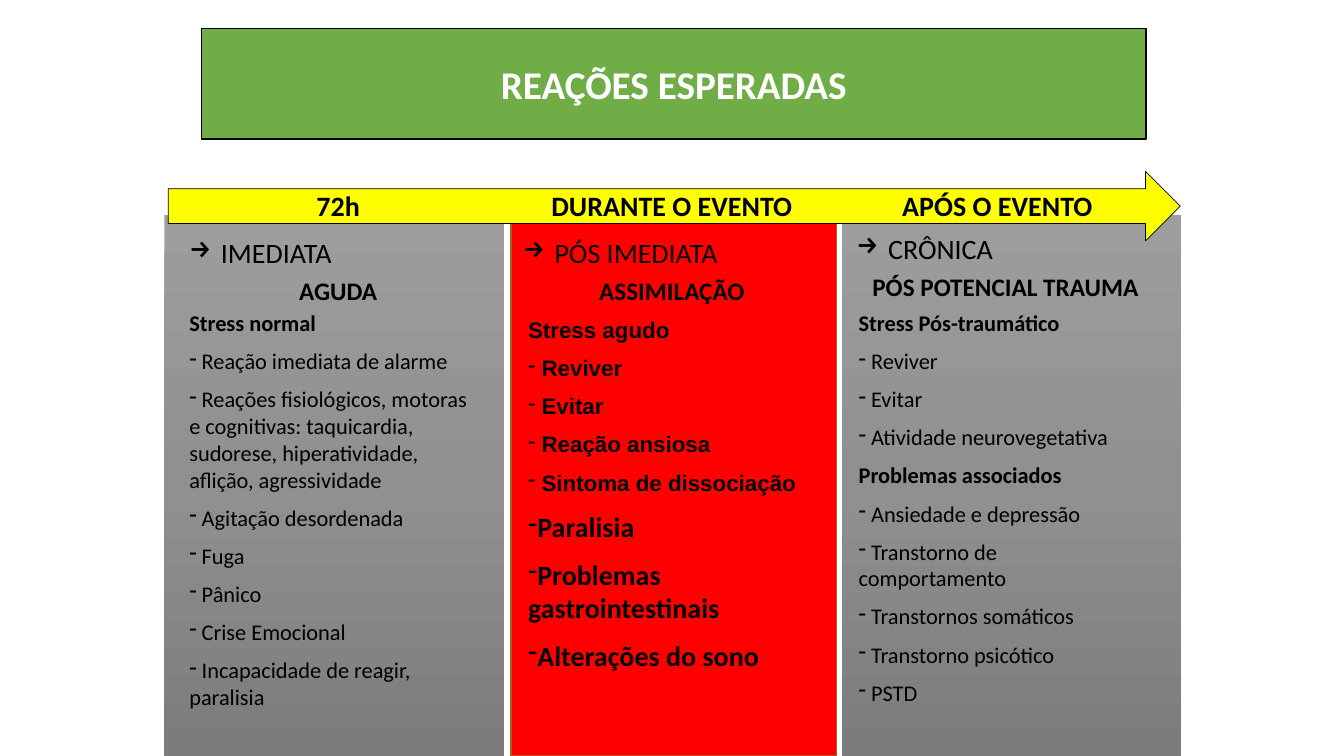
from copy import deepcopy

from lxml import etree
from pptx import Presentation
from pptx.dml.color import RGBColor
from pptx.enum.shapes import MSO_SHAPE
from pptx.enum.text import MSO_ANCHOR, PP_ALIGN
from pptx.oxml.ns import qn
from pptx.util import Pt

RECTANGLE, RIGHT_ARROW = MSO_SHAPE.RECTANGLE, MSO_SHAPE.RIGHT_ARROW
LEFT, CENTER = PP_ALIGN.LEFT, PP_ALIGN.CENTER
MIDDLE = MSO_ANCHOR.MIDDLE

BLACK = RGBColor(0x00, 0x00, 0x00)
WHITE = RGBColor(0xFF, 0xFF, 0xFF)
GREEN = RGBColor(0x70, 0xAD, 0x47)
YELLOW = RGBColor(0xFF, 0xFF, 0x00)
RED = RGBColor(0xFF, 0x00, 0x00)
BROWN = RGBColor(0xAF, 0x5C, 0x24)
GRAYS = [RGBColor(0x9D, 0x9D, 0x9D), RGBColor(0x90, 0x90, 0x90), RGBColor(0x7C, 0x7C, 0x7C)]

HEADING_WIDTH = 226.8

# Each item: text, bulleted, bold, size, font
def heading(text, font="Calibri"):
    return text, False, True, 16, font


def item(text, bold=False, size=16, font="Calibri"):
    return text, True, bold, size, font


ACUTE = [heading("Stress normal")] + [item(text) for text in (
    " Reação imediata de alarme",
    " Reações fisiológicos, motoras e cognitivas: taquicardia, sudorese, "
    "hiperatividade, aflição, agressividade",
    " Agitação desordenada", " Fuga", " Pânico", " Crise Emocional",
    " Incapacidade de reagir, paralisia")]

ASSIMILATION = [heading("Stress agudo", "Arial")] + [
    item(text, True, font="Arial") for text in (
        " Reviver", " Evitar", " Reação ansiosa", " Sintoma de dissociação")] + [
    item(text, True, 20) for text in (
        "Paralisia", "Problemas gastrointestinais", "Alterações do sono")]

CHRONIC = [heading("Stress Pós-traumático")] + [
    item(text) for text in (" Reviver", " Evitar", " Atividade neurovegetativa")] + [
    heading("Problemas associados")] + [item(text) for text in (
        " Ansiedade e depressão", " Transtorno de comportamento",
        " Transtornos somáticos", " Transtorno psicótico", " PSTD")]

# Panel (left, width, fill), period (text, left), phase (text, left, top),
# stage, list (items, left, top, width)
COLUMNS = [
    ((117.36, 242.64, GRAYS), ("72h", 128.16), ("IMEDIATA", 128.16, 164.88),
     "AGUDA", (ACUTE, 128.16, 217.44, 221.04)),
    ((365.04, 232.56, RED), ("DURANTE O EVENTO", 366.48), ("PÓS IMEDIATA", 366.48, 164.88),
     "ASSIMILAÇÃO", (ASSIMILATION, 370.08, 222.48, 221.04)),
    ((601.2, 242.64, GRAYS), ("APÓS O EVENTO", 599.04), ("CRÔNICA", 604.8, 162),
     "PÓS POTENCIAL TRAUMA", (CHRONIC, 606.24, 217.44, 219.6)),
]


def format_para(para, size, bold=False, color=BLACK, font="Calibri", align=LEFT):
    para.alignment = align
    for span in para.runs:
        span.font.name = font
        span.font.size = Pt(size)
        span.font.bold = bold
        span.font.color.rgb = color


def add_bullet(para, character, indent=0):
    properties = para._p.get_or_add_pPr()
    properties.set("marL", str(Pt(indent)))
    properties.set("indent", str(Pt(-indent)))
    etree.SubElement(properties, qn("a:buChar")).set("char", character)


def paint(shape, color, line_color=None, line_width=1):
    shape.fill.solid()
    shape.fill.fore_color.rgb = color
    if line_color is None:
        shape.line.fill.background()
    else:
        shape.line.color.rgb = line_color
        shape.line.width = Pt(line_width)


def paint_gradient(shape, colors):
    shape.line.fill.background()
    shape.fill.gradient()
    shape.fill.gradient_angle = 270
    stop_list = shape._element.spPr.find(".//" + qn("a:gsLst"))
    stop_list.insert(1, deepcopy(stop_list[0]))
    for index, (stop, color) in enumerate(zip(shape.fill.gradient_stops, colors)):
        stop.position = index / (len(colors) - 1)
        stop.color.rgb = color


def add_shape(page, kind, left, top, width, height):
    shape = page.shapes.add_shape(kind, Pt(left), Pt(top), Pt(width), Pt(height))
    shape.shadow.inherit = False
    return shape


def add_text(page, left, top, width, height):
    box = page.shapes.add_textbox(Pt(left), Pt(top), Pt(width), Pt(height))
    box.text_frame.word_wrap = True
    return box.text_frame


def add_label(page, text, left, top, size, bold=True, align=CENTER):
    para = add_text(page, left, top, HEADING_WIDTH, 31).paragraphs[0]
    para.text = text
    format_para(para, size, bold, align=align)
    return para


def add_list(page, items, left, top, width):
    frame = add_text(page, left, top, width, 307)
    for index, (text, bulleted, bold, size, font) in enumerate(items):
        para = frame.add_paragraph() if index else frame.paragraphs[0]
        para.text = text
        para.space_before = Pt(size / 2 if index else 0)
        format_para(para, size, bold, font=font)
        if bulleted:
            add_bullet(para, "-")


def set_title(page, text):
    title = page.shapes.title
    title.left, title.top, title.width, title.height = Pt(144), Pt(20.16), Pt(674.64), Pt(79.2)
    paint(title, GREEN, BLACK)
    title.text_frame.text = text
    title.text_frame.vertical_anchor = MIDDLE
    format_para(title.text_frame.paragraphs[0], 28, True, WHITE, align=CENTER)


def main():
    deck = Presentation()
    deck.slide_width, deck.slide_height = Pt(960), Pt(540)
    page = deck.slides.add_slide(deck.slide_layouts[5])
    set_title(page, "REAÇÕES ESPERADAS")

    # Column panels
    for (left, width, fill), *_ in COLUMNS:
        panel = add_shape(page, RECTANGLE, left, 153.36, width, 386.64)
        if fill is GRAYS:
            paint_gradient(panel, fill)
        else:
            paint(panel, fill, BROWN)

    # Timeline arrow
    arrow = add_shape(page, RIGHT_ARROW, 120.24, 122.4, 722.88, 49.68)
    paint(arrow, YELLOW, BLACK, 0.5)

    # Column texts
    for _, (period, period_left), (phase, left, top), stage, reactions in COLUMNS:
        add_label(page, period, period_left, 131.04, 20)
        phase_para = add_label(page, phase, left, top, 20, False, LEFT)
        add_bullet(phase_para, "→", 22.5)
        add_label(page, stage, left, top + 28.4, 18)
        add_list(page, *reactions)

    deck.save("out.pptx")


if __name__ == "__main__":
    main()
